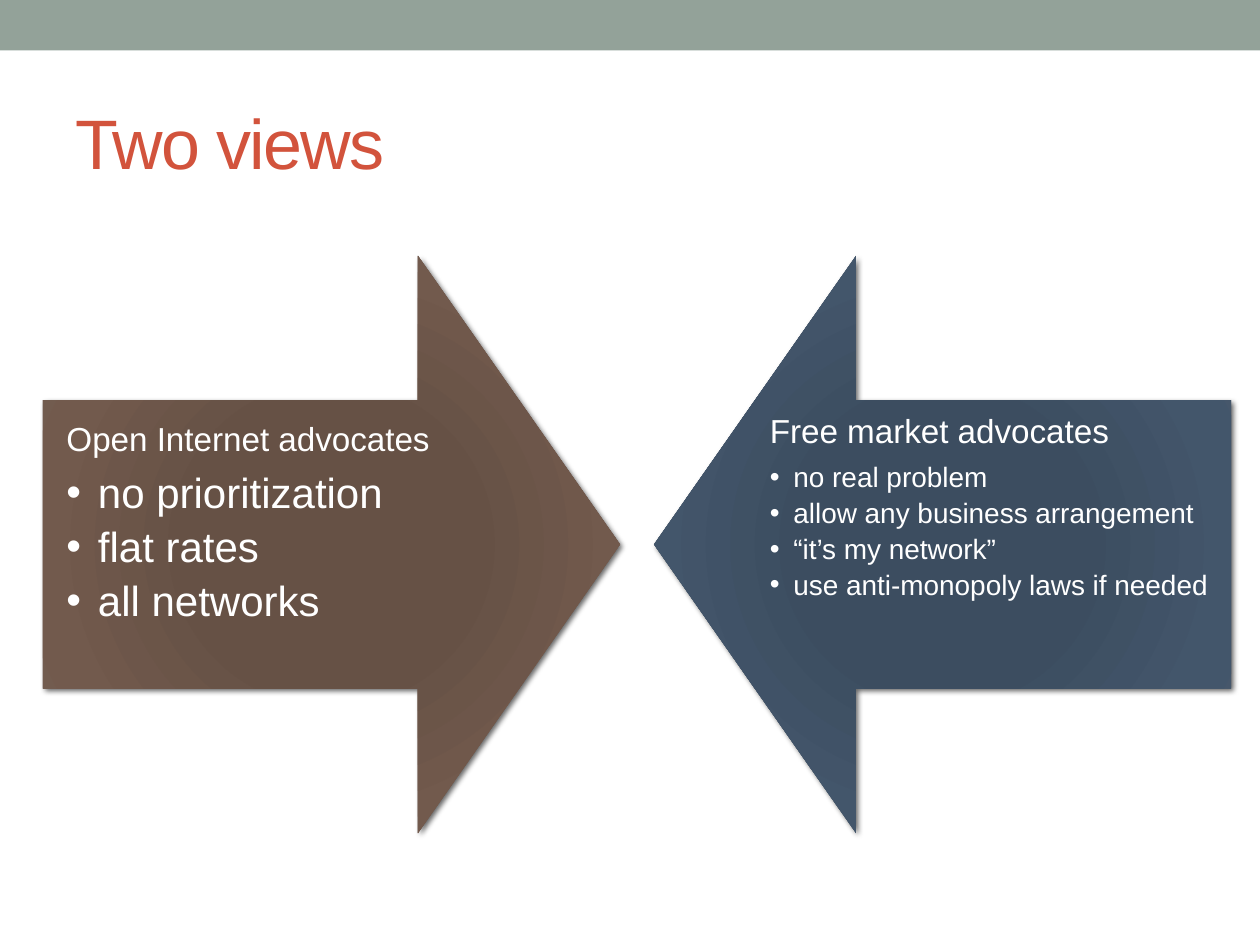
from lxml.etree import SubElement
from pptx import Presentation
from pptx.dml.color import RGBColor
from pptx.enum.shapes import MSO_SHAPE as SHAPE
from pptx.enum.text import MSO_ANCHOR as ANCHOR, MSO_AUTO_SIZE as AUTOSIZE, PP_ALIGN as ALIGN
from pptx.oxml import parse_xml
from pptx.oxml.ns import nsdecls, qn
from pptx.util import Pt

TITLE = "Two views"
STOPS = (0, 34, 70, 100)
ARROW_TOP, ARROW_SIZE = 146.2, 329.8
TEXT_TOP, TEXT_W, TEXT_H = 228.2, 272.2, 164.9
VIEWS = [
    dict(shape=SHAPE.RIGHT_ARROW, left=24.5, text_left=24.5, inset=13.5,
         colors=("685044", "665145", "725A4D", "726056"),
         head="Open Internet advocates", size=24, indent=18, after=4.9,
         items=["no prioritization", "flat rates", "all networks"]),
    dict(shape=SHAPE.LEFT_ARROW, left=373.7, text_left=431.3, inset=8.6,
         colors=("3B4D61", "3C4D60", "43566B", "4C5A6A"),
         head="Free market advocates", size=16, indent=13.5, after=3.2,
         items=["no real problem", "allow any business arrangement",
                "“it’s my network”", "use anti-monopoly laws if needed"]),
]


def rgb(color):
    """Turn a hex string into a colour."""
    return RGBColor.from_string(color)


def place(sp, left, top, width, height):
    """Move and size a shape in points."""
    sp.left, sp.top, sp.width, sp.height = map(Pt, (left, top, width, height))


def add_run(p, text, size, color):
    """Add one formatted run to a paragraph."""
    r = p.add_run()
    r.text = text
    r.font.name, r.font.size = "Arial", Pt(size)
    r.font.color.rgb = rgb(color)
    return r


def add_arrow(slide, view):
    """Add an arrow with a radial gradient and a shadow behind the text."""
    sp = slide.shapes.add_shape(view["shape"], Pt(view["left"]), Pt(ARROW_TOP),
                                Pt(ARROW_SIZE), Pt(ARROW_SIZE))
    sp.adjustments[0], sp.adjustments[1] = 0.5, 0.35
    sp.line.fill.background()
    sp.fill.background()
    sp.shadow.inherit = False
    stops = "".join(f'<a:gs pos="{pos * 1000}"><a:srgbClr val="{color}"/></a:gs>'
                    for pos, color in zip(STOPS, view["colors"]))
    grad = parse_xml(
        f'<a:gradFill {nsdecls("a")} rotWithShape="1"><a:gsLst>{stops}</a:gsLst><a:path path="circle">'
        '<a:fillToRect l="50000" t="50000" r="50000" b="50000"/></a:path></a:gradFill>')
    props = sp._element.spPr
    props.replace(props.find(qn("a:noFill")), grad)
    props.find(qn("a:effectLst")).append(parse_xml(
        f'<a:outerShdw {nsdecls("a")} blurRad="{Pt(3)}" dist="{Pt(2)}" dir="2700000" rotWithShape="0">'
        '<a:srgbClr val="000000"><a:alpha val="60000"/></a:srgbClr></a:outerShdw>'))
    slide.shapes._spTree.insert(2, sp._element)


def add_line(p, text, size, after, indent=0):
    """Fill a list paragraph, bulleted when it has an indent."""
    p.alignment, p.line_spacing = ALIGN.LEFT, 0.9
    p.space_before, p.space_after = Pt(0), Pt(after)
    props = p._p.get_or_add_pPr()
    props.set("marL", str(Pt(indent)))
    props.set("indent", str(Pt(-indent)))
    if indent:
        SubElement(props, qn("a:buChar")).set("char", "•")
    else:
        SubElement(props, qn("a:buNone"))
    add_run(p, text, size, "FFFFFF")


def fill_body(body, view):
    """Write a heading and its bullets into a body placeholder."""
    place(body, view["text_left"], TEXT_TOP, TEXT_W, TEXT_H)
    tf = body.text_frame
    tf.auto_size, tf.vertical_anchor, tf.word_wrap = AUTOSIZE.NONE, ANCHOR.TOP, True
    tf.margin_left = tf.margin_right = tf.margin_top = tf.margin_bottom = Pt(view["inset"])
    add_line(tf.paragraphs[0], view["head"], 19, 7.6)
    for item in view["items"]:
        add_line(tf.add_paragraph(), item, view["size"], view["after"], view["indent"])


def main():
    """Build the slide."""
    prs = Presentation()
    prs.slide_width, prs.slide_height = Pt(720), Pt(540)
    slide = prs.slides.add_slide(prs.slide_layouts[3])
    title, *bodies = slide.placeholders

    place(title, 36, 41.8, 648, 77.8)
    title.text_frame.vertical_anchor = ANCHOR.MIDDLE
    p = title.text_frame.paragraphs[0]
    p.alignment = ALIGN.LEFT
    r = add_run(p, TITLE, 40, "D2533C")
    r.font._element.set("spc", "-100")

    for body, view in zip(bodies, VIEWS):
        fill_body(body, view)
        add_arrow(slide, view)

    band = slide.shapes.add_shape(SHAPE.RECTANGLE, 0, 0, prs.slide_width, Pt(28.8))
    band.shadow.inherit = False
    band.fill.solid()
    band.fill.fore_color.rgb = rgb("93A299")
    band.line.fill.background()
    slide.shapes._spTree.insert(2, band._element)
    prs.save("out.pptx")


if __name__ == "__main__":
    main()
